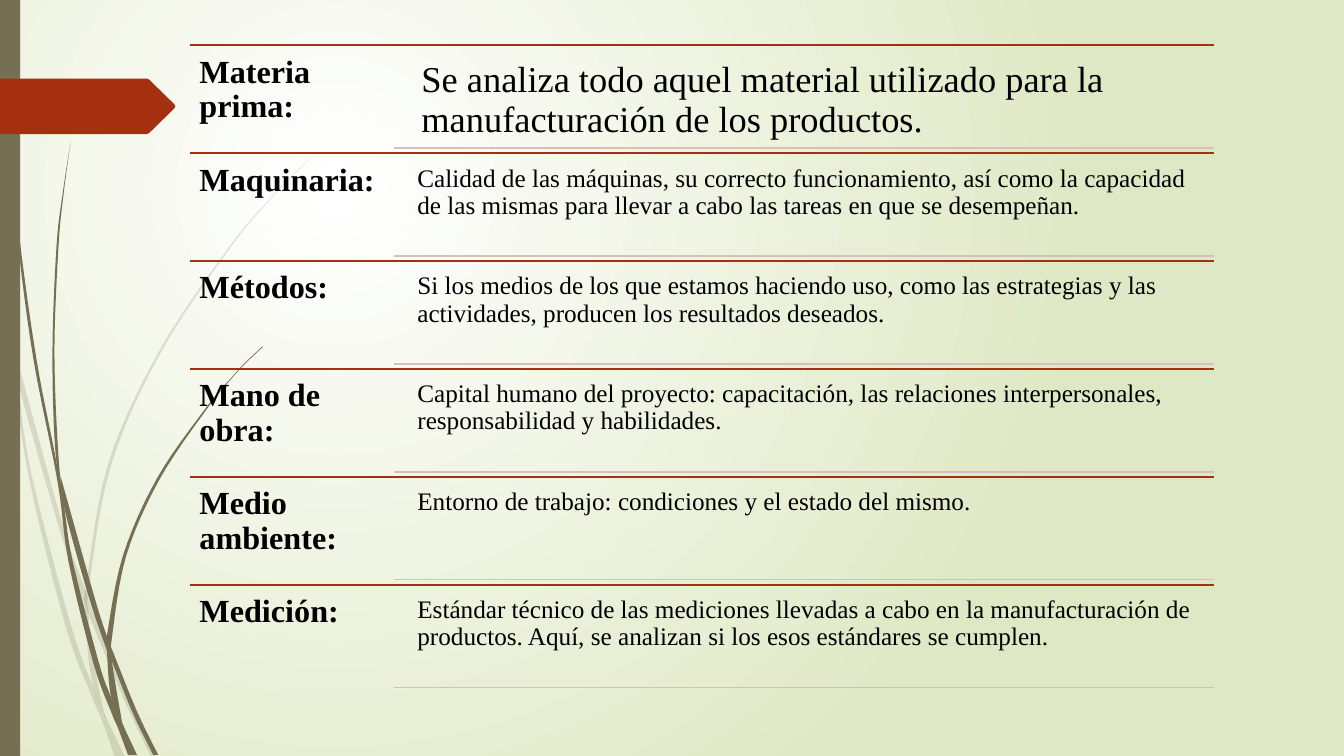
from pptx import Presentation
from pptx.dml.color import RGBColor
from pptx.enum.shapes import MSO_CONNECTOR, MSO_SHAPE
from pptx.enum.text import MSO_ANCHOR, PP_ALIGN
from pptx.oxml.ns import qn
from pptx.util import Pt
from lxml.etree import SubElement

PX = 9144  # EMU per px, 100 px to the inch
WIDTH, HEIGHT = 1333, 750
FONT = "Times New Roman"
COLORS = {"white": "FFFFFF", "pale_green": "DFE8C4", "olive": "766F54",
          "red": "A53010", "rose": "D8BEBD", "black": "000000"}

# Each blade of grass: its left edge and its right edge, both from the tip down.
FAINT_BLADES = [
    ([(0, 299), (10, 344), (11, 350), (28, 470), (65, 621), (92, 693), (101, 714), (114, 751)],
     [(0, 282), (9, 322), (17, 376), (31, 469), (70, 619), (93, 683), (105, 711), (124, 751)]),
    ([(14, 345), (17, 376), (58, 522), (84, 599), (88, 610), (123, 694), (150, 751)],
     [(14, 345), (62, 520), (85, 586), (92, 607), (127, 692), (155, 751)]),
    ([(312, 153), (289, 175), (268, 197), (228, 244), (158, 348), (107, 461), (85, 584),
      (84, 599), (87, 646), (93, 683), (105, 711)],
     [(312, 153), (290, 175), (268, 198), (229, 245), (160, 349), (110, 462), (88, 584),
      (88, 610), (91, 646), (103, 706), (105, 711)]),
]
SOLID_BLADES = [
    ([(3, 0), (4, 48), (7, 110), (17, 233), (33, 355), (57, 477), (68, 557), (93, 659),
      (111, 708), (117, 722), (127, 749)],
     [(4, 0), (5, 48), (8, 109), (19, 232), (36, 355), (55, 453), (64, 505), (72, 556),
      (98, 657), (110, 691), (122, 719), (136, 749)]),
    ([(60, 472), (64, 505), (88, 592), (106, 645), (111, 656), (132, 708), (152, 749)],
     [(60, 472), (93, 590), (106, 631), (113, 649), (136, 706), (157, 749)]),
    ([(70, 141), (62, 193), (56, 245), (52, 349), (55, 449), (64, 505)],
     [(70, 141), (63, 193), (58, 245), (54, 349), (58, 453), (64, 505)]),
    ([(260, 344), (245, 358), (231, 373), (204, 405), (156, 474), (122, 551), (106, 631),
      (106, 645), (110, 691), (122, 719)],
     [(261, 344), (245, 359), (231, 374), (205, 406), (158, 476), (125, 552), (111, 633),
      (111, 656), (121, 716), (122, 719)]),
]

# Term, explanation, size and inset of the explanation
ROWS = [
    ("Materia prima:", "Se analiza todo aquel material utilizado para la "
     "manufacturación de los productos.", 26, 11),
    ("Maquinaria:", "Calidad de las máquinas, su correcto funcionamiento, así como la "
     "capacidad de las mismas para llevar a cabo las tareas en que se desempeñan.", 18, 7),
    ("Métodos:", "Si los medios de los que estamos haciendo uso, como las estrategias y "
     "las actividades, producen los resultados deseados.", 18, 7),
    ("Mano de obra:", "Capital humano del proyecto: capacitación, las relaciones "
     "interpersonales, responsabilidad y habilidades.", 18, 7),
    ("Medio ambiente:", "Entorno de trabajo: condiciones y el estado del mismo.", 18, 7),
    ("Medición:", "Estándar técnico de las mediciones llevadas a cabo en la "
     "manufacturación de productos. Aquí, se analizan si los esos estándares se cumplen.",
     18, 7),
]


def rgb(name):
    return RGBColor.from_string(COLORS[name])


def paint(sp, color, opacity=100):
    sp.shadow.inherit = False
    sp.fill.solid()
    sp.fill.fore_color.rgb = rgb(color)
    sp.line.fill.background()
    if opacity < 100:
        clr = sp.fill._xPr.find(".//" + qn("a:srgbClr"))
        SubElement(clr, qn("a:alpha"), val=str(opacity * 1000))


def smooth(points, steps=6):
    """Sample a Catmull-Rom curve through the points."""
    ends = [points[0], *points, points[-1]]
    curve = []
    for a, b, c, d in zip(ends, ends[1:], ends[2:], ends[3:]):
        for i in range(steps):
            t = i / steps
            curve.append(tuple(
                (2 * q + (r - p) * t + (2 * p - 5 * q + 4 * r - s) * t ** 2
                 + (3 * q - p - 3 * r + s) * t ** 3) / 2
                for p, q, r, s in zip(a, b, c, d)))
    return curve + [points[-1]]


def add_outline(s, points, color, opacity=100):
    emu = [(round(x * PX), round(y * PX)) for x, y in points]
    builder = s.shapes.build_freeform(*emu[0], scale=1.0)
    builder.add_line_segments(emu[1:], close=True)
    paint(builder.convert_to_shape(), color, opacity)


def add_rule(s, x1, x2, y, color):
    cn = s.shapes.add_connector(MSO_CONNECTOR.STRAIGHT, x1 * PX, y * PX, x2 * PX, y * PX)
    cn.line.color.rgb = rgb(color)
    cn.line.width = Pt(1.25)
    SubElement(cn._element.spPr, qn("a:effectLst"))


def add_text(s, x, y, w, h, text, size, inset, bold=False):
    tf = s.shapes.add_textbox(x * PX, y * PX, w * PX, h * PX).text_frame
    tf.word_wrap = True
    tf.vertical_anchor = MSO_ANCHOR.TOP
    tf.margin_left = tf.margin_right = tf.margin_top = tf.margin_bottom = inset * PX
    p = tf.paragraphs[0]
    p.alignment = PP_ALIGN.LEFT
    p.line_spacing = 0.9
    r = p.add_run()
    r.text = text
    r.font.name = FONT
    r.font.size = Pt(size)
    r.font.bold = bold
    r.font.color.rgb = rgb("black")


def set_background(s):
    fill = s.background.fill
    fill.gradient()
    for stop, color in zip(fill.gradient_stops, ("white", "pale_green")):
        stop.color.rgb = rgb(color)
    lin = s.element.find(".//" + qn("a:lin"))
    grad = lin.getparent()
    grad.remove(lin)
    radial = SubElement(grad, qn("a:path"), path="circle")
    SubElement(radial, qn("a:fillToRect"), l="50000", t="50000", r="100000", b="100000")


def add_grass(s):
    for blades, opacity in ((FAINT_BLADES, 20), (SOLID_BLADES, 100)):
        for left, right in blades:
            add_outline(s, smooth(left) + smooth(right)[::-1], "olive", opacity)


def add_side_bar(s, x, y, w, h):
    paint(s.shapes.add_shape(MSO_SHAPE.RECTANGLE, x * PX, y * PX, w * PX, h * PX), "olive")


def add_arrow_tag(s, x, y, w, h):
    tip, mid = x + w, y + h / 2
    add_outline(s, [(x, y), (tip - 28, y), (tip - 26, y + 1), (tip - 1, mid - 2),
                    (tip, mid), (tip - 1, mid + 2), (tip - 26, y + h - 1),
                    (tip - 28, y + h), (x, y + h)], "red")


def add_definitions(s, x, y, w, pitch):
    """Stack the rows: bold term at left, explanation at right, ruled apart."""
    right = x + w
    for i, (term, explanation, size, inset) in enumerate(ROWS):
        top = y + i * pitch
        add_rule(s, x, right, top, "red")
        add_text(s, x, top, 203, pitch, term, 23, 10, bold=True)
        add_text(s, x + 219, top + 5, w - 219, pitch - 10, explanation, size, inset)
        add_rule(s, x + 203, right, top + pitch - 5, "rose")


def main():
    prs = Presentation()
    prs.slide_width, prs.slide_height = WIDTH * PX, HEIGHT * PX
    s = prs.slides.add_slide(prs.slide_layouts[6])
    set_background(s)
    add_grass(s)
    add_side_bar(s, 0, 0, 20, HEIGHT)
    add_arrow_tag(s, 0, 78, 174, 55)
    add_definitions(s, 188, 45, 1016, 107)
    prs.save("out.pptx")


if __name__ == "__main__":
    main()
